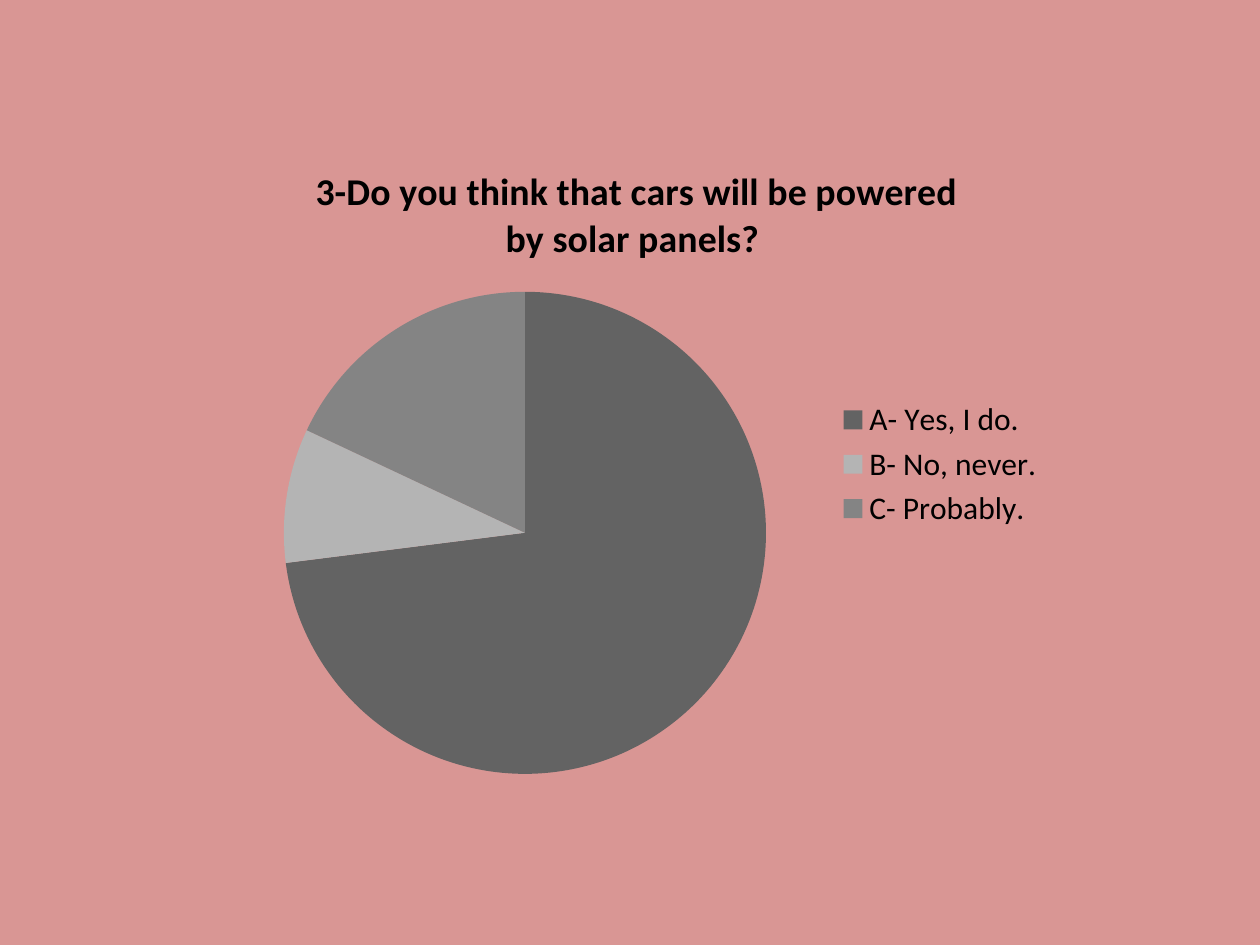
from dataclasses import dataclass

from pptx import Presentation
from pptx.chart.data import CategoryChartData
from pptx.dml.color import RGBColor
from pptx.enum.chart import XL_CHART_TYPE, XL_LEGEND_POSITION
from pptx.util import Inches, Pt


@dataclass(frozen=True)
class Theme:
    """Colours and type sizes of the survey slide."""

    font: str = "Calibri"
    background: str = "D99694"
    text: str = "000000"
    slices: tuple = ("636363", "B4B4B4", "848484")
    title_size: float = 21.6
    body_size: float = 18


class SurveySlide:
    """Holds the theme and the current slide."""

    def __init__(self, presentation, theme):
        """Add a blank slide with the theme background."""
        self.theme = theme
        self.slide = presentation.slides.add_slide(presentation.slide_layouts[6])
        self.fill(self.slide.background, theme.background)

    def fill(self, element, color):
        """Give an element a solid fill."""
        element.fill.solid()
        element.fill.fore_color.rgb = RGBColor.from_string(color)

    def style_font(self, font, size, bold=False):
        """Apply the theme type to a font."""
        values = {"name": self.theme.font, "size": Pt(size), "bold": bold}
        for name, value in values.items():
            setattr(font, name, value)
        font.color.rgb = RGBColor.from_string(self.theme.text)

    def add_pie(self, question, answers, left, top, width, height):
        """Add a titled pie chart with a legend on the right."""
        data = CategoryChartData()
        data.categories = list(answers)
        data.add_series(question, list(answers.values()))
        box = [Inches(length) for length in (left, top, width, height)]
        chart = self.slide.shapes.add_chart(XL_CHART_TYPE.PIE, *box, data).chart
        self.style_font(chart.font, self.theme.body_size)

        title_frame = chart.chart_title.text_frame
        title_frame.text = question
        title_run = title_frame.paragraphs[0].runs[0]
        self.style_font(title_run.font, self.theme.title_size, bold=True)

        chart.has_legend = True
        legend_format = {"position": XL_LEGEND_POSITION.RIGHT, "include_in_layout": False}
        for name, value in legend_format.items():
            setattr(chart.legend, name, value)

        plot = chart.plots[0]
        plot.vary_by_categories = True
        for index, color in enumerate(self.theme.slices):
            self.fill(plot.series[0].points[index].format, color)


def main():
    """Build and save the survey slide."""
    presentation = Presentation()
    size = {"slide_width": Inches(10), "slide_height": Inches(7.5)}
    for name, value in size.items():
        setattr(presentation, name, value)
    survey = SurveySlide(presentation, Theme())
    survey.add_pie(
        "3-Do you think that cars will be powered by solar panels? ",
        {"A- Yes, I do.": 73, "B- No, never.": 9, "C- Probably.": 18},
        left=1.72, top=1.09, width=6.67, height=5.19,
    )
    presentation.save("out.pptx")


if __name__ == "__main__":
    main()
